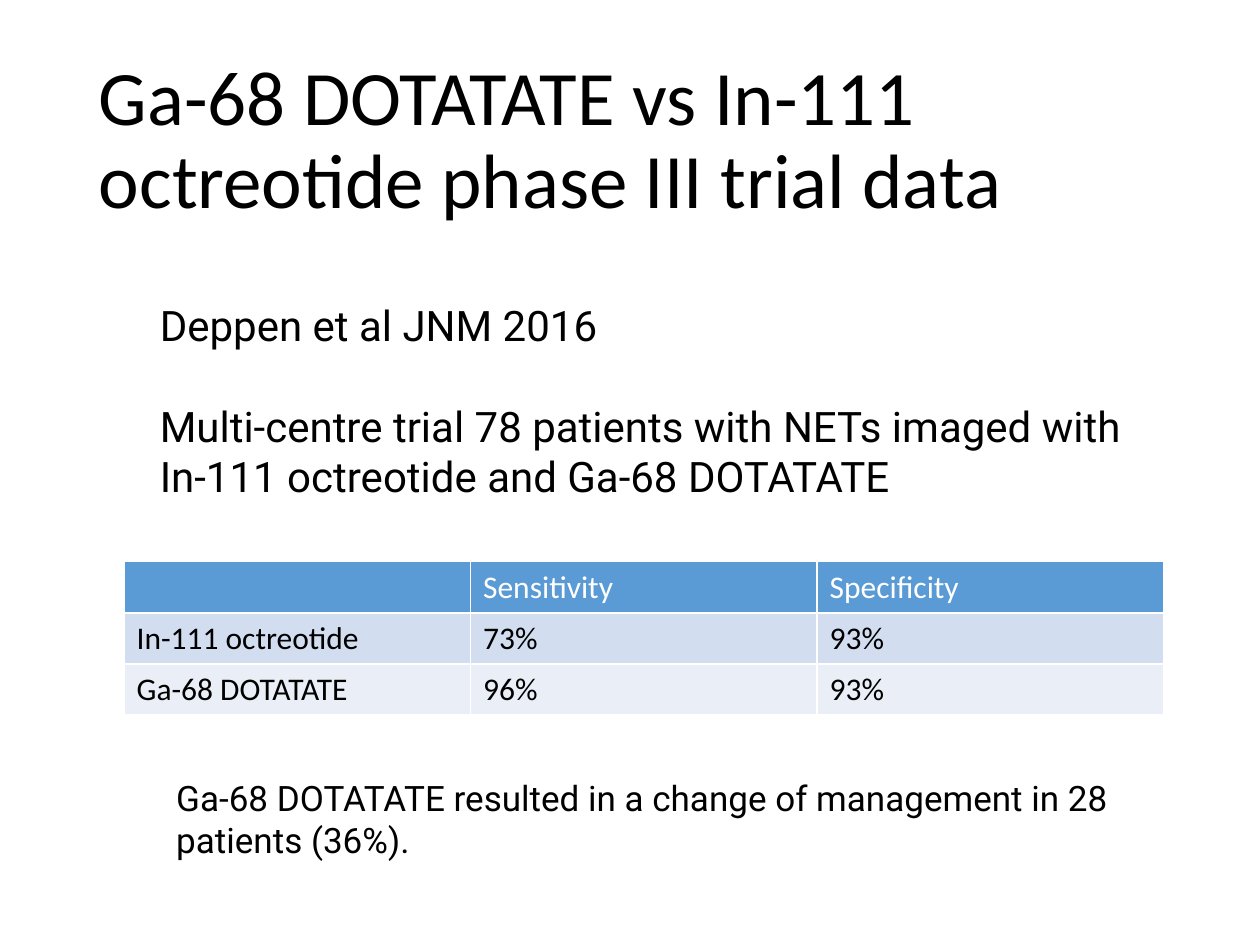
from dataclasses import dataclass

from pptx import Presentation
from pptx.dml.color import RGBColor
from pptx.enum.text import MSO_ANCHOR
from pptx.slide import Slide
from pptx.util import Pt

BLACK = RGBColor(0x00, 0x00, 0x00)
WHITE = RGBColor(0xFF, 0xFF, 0xFF)
HEADER_BLUE = RGBColor(0x5B, 0x9B, 0xD5)
BAND_DARK = RGBColor(0xD2, 0xDE, 0xEF)
BAND_LIGHT = RGBColor(0xEA, 0xEF, 0xF7)


@dataclass(frozen=True)
class Passage:
    left: float
    top: float
    width: float
    height: float
    paragraphs: tuple[str, ...]
    font: str
    size: float
    anchor: MSO_ANCHOR = MSO_ANCHOR.TOP
    line_spacing: float = 1.0
    gap: float = 0


@dataclass(frozen=True)
class ResultRow:
    values: tuple[str, ...]
    fill: RGBColor
    color: RGBColor


PASSAGES = (
    Passage(49.5, 28.75, 621, 104.4,
            ("Ga-68 DOTATATE vs In-111 octreotide phase III trial data",),
            "Calibri", 44, MSO_ANCHOR.MIDDLE, line_spacing=0.9),
    Passage(84.25, 167.75, 571, 123.85,
            ("Deppen et al JNM 2016",
             "Multi-centre trial 78 patients with NETs imaged with "
             "In-111 octreotide and Ga-68 DOTATATE"),
            "Roboto", 24, gap=28.5),
    Passage(93.6, 440, 550, 55.5,
            ("Ga-68 DOTATATE resulted in a change of management in 28 "
             "patients (36%).",),
            "Roboto", 20),
)

RESULTS = (
    ResultRow(("", "Sensitivity", "Specificity"), HEADER_BLUE, WHITE),
    ResultRow(("In-111 octreotide", "73%", "93%"), BAND_DARK, BLACK),
    ResultRow(("Ga-68 DOTATATE", "96%", "93%"), BAND_LIGHT, BLACK),
)
COLUMN_WIDTH = 198
ROW_HEIGHT = 29.2


def add_passage(slide: Slide, passage: Passage) -> None:
    box = slide.shapes.add_textbox(Pt(passage.left), Pt(passage.top),
                                   Pt(passage.width), Pt(passage.height))
    frame = box.text_frame
    frame.word_wrap = True
    frame.vertical_anchor = passage.anchor
    frame.text = "\n".join(passage.paragraphs)
    for index, paragraph in enumerate(frame.paragraphs):
        paragraph.line_spacing = passage.line_spacing
        if index:
            paragraph.space_before = Pt(passage.gap)
        paragraph.font.name = passage.font
        paragraph.font.size = Pt(passage.size)
        paragraph.font.color.rgb = BLACK


def add_results(slide: Slide, rows: tuple[ResultRow, ...],
                left: float, top: float) -> None:
    columns = len(rows[0].values)
    table = slide.shapes.add_table(
        len(rows), columns, Pt(left), Pt(top),
        Pt(columns * COLUMN_WIDTH), Pt(len(rows) * ROW_HEIGHT)).table
    for row_index, row in enumerate(rows):
        for column_index, value in enumerate(row.values):
            cell = table.cell(row_index, column_index)
            cell.fill.solid()
            cell.fill.fore_color.rgb = row.fill
            cell.text = value
            font = cell.text_frame.paragraphs[0].font
            font.name = "Calibri"
            font.size = Pt(18)
            font.bold = False
            font.color.rgb = row.color


def main() -> None:
    deck = Presentation()
    deck.slide_width = Pt(720)
    deck.slide_height = Pt(540)
    slide = deck.slides.add_slide(deck.slide_layouts[6])
    title, study, outcome = PASSAGES
    add_passage(slide, title)
    add_results(slide, RESULTS, 70.9, 321)
    add_passage(slide, study)
    add_passage(slide, outcome)
    deck.save("out.pptx")


if __name__ == "__main__":
    main()
